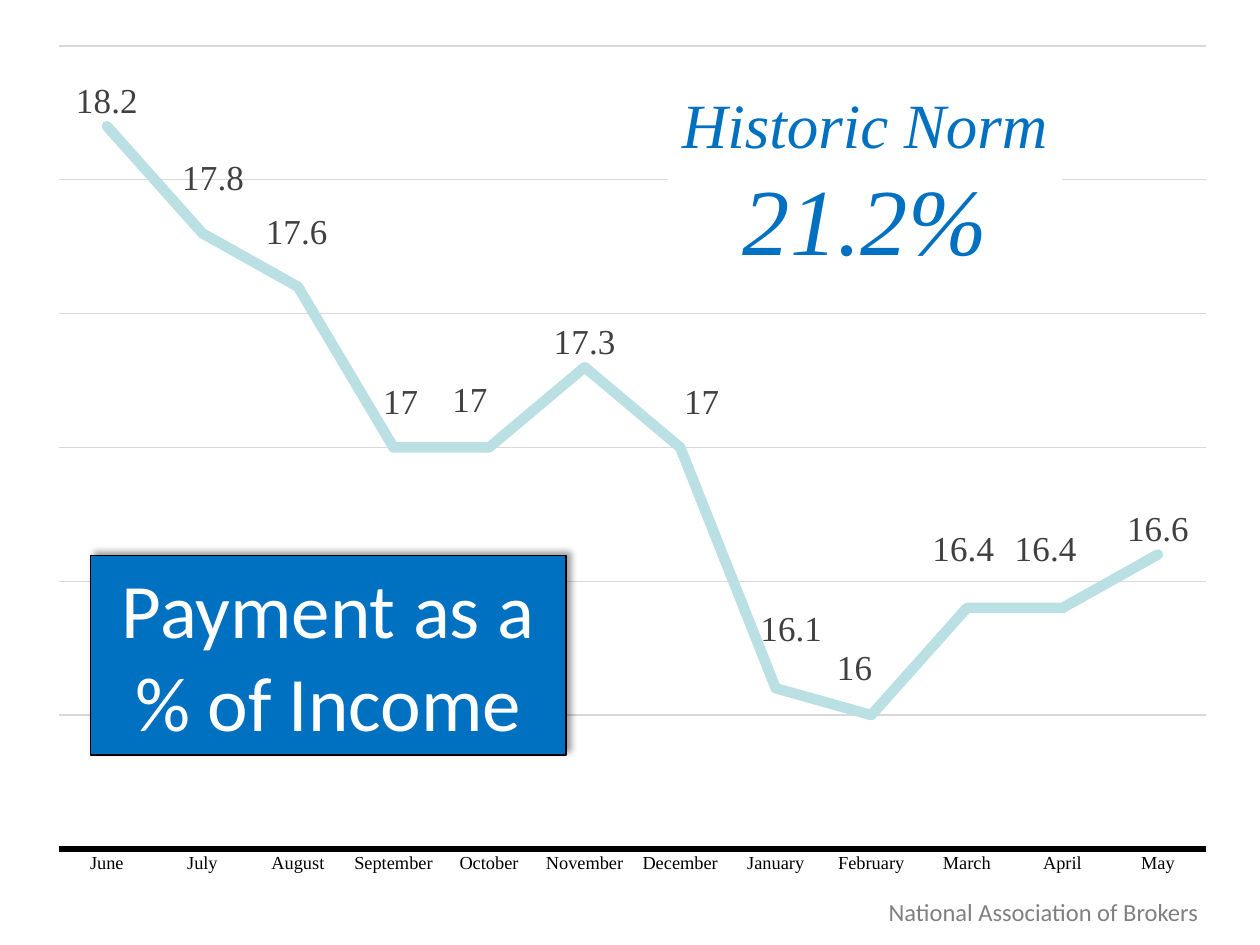
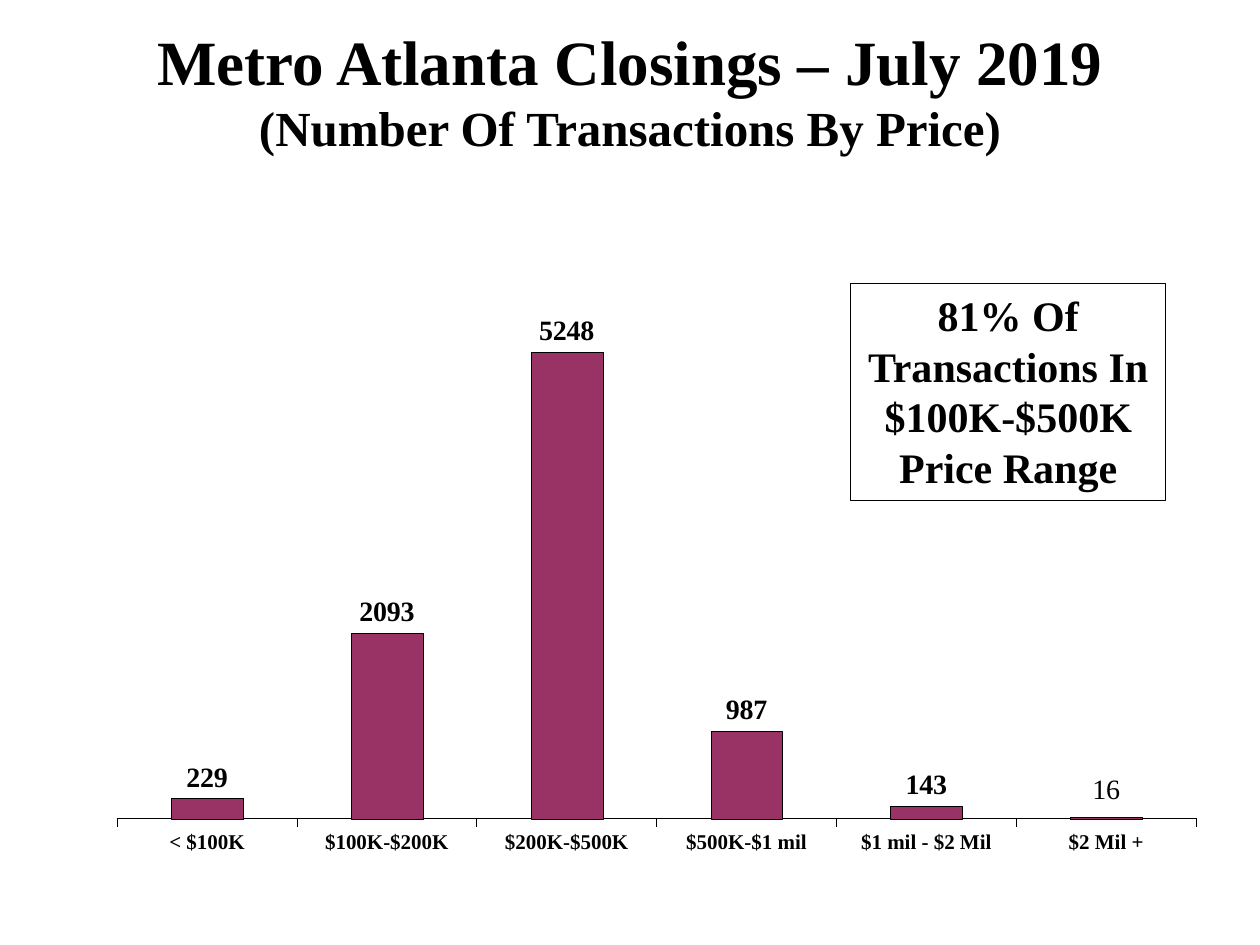
from pptx import Presentation
from pptx.chart.data import CategoryChartData
from pptx.dml.color import RGBColor
from pptx.enum.chart import XL_CHART_TYPE, XL_LABEL_POSITION, XL_TICK_LABEL_POSITION, XL_TICK_MARK
from pptx.enum.shapes import MSO_SHAPE
from pptx.enum.text import MSO_ANCHOR, MSO_AUTO_SIZE, PP_ALIGN
from pptx.oxml import parse_xml
from pptx.oxml.ns import nsdecls
from pptx.util import Cm, Pt

BLACK = RGBColor(0x00, 0x00, 0x00)
WHITE = RGBColor(0xFF, 0xFF, 0xFF)
BLUE = RGBColor(0x00, 0x70, 0xC0)
GRAY = RGBColor(0x80, 0x80, 0x80)
LABEL_GRAY = RGBColor(0x40, 0x40, 0x40)
GRID_GRAY = RGBColor(0xD9, 0xD9, 0xD9)
PALE_TEAL = RGBColor(0xBB, 0xE0, 0xE3)
PLUM = RGBColor(0x99, 0x33, 0x66)
SERIF = "Times New Roman"
SANS = "Calibri"

PAYMENT_SHARES = {
    "June": 18.2, "July": 17.8, "August": 17.6, "September": 17,
    "October": 17, "November": 17.3, "December": 17, "January": 16.1,
    "February": 16, "March": 16.4, "April": 16.4, "May": 16.6,
}
LABEL_SHIFTS_PERCENT = {
    1: (0.9, -3.5), 2: (-0.1, -3.4), 3: (0.6, -2.3), 4: (-1.6, -2.6), 6: (1.8, -2.3),
    7: (1.3, -3.9), 8: (-1.4, -2.5), 9: (-0.3, -3.9), 10: (-1.4, -3.9),
}
CLOSINGS = {
    "< $100K": 229, "$100K-$200K": 2093, "$200K-$500K": 5248,
    "$500K-$1 mil": 987, "$1 mil - $2 Mil": 143, "$2 Mil +": 16,
}


def set_attributes(target, values):
    for name, value in values.items():
        setattr(target, name, value)


def format_font(font, name, size, color, **values):
    set_attributes(font, {"name": name, "size": Pt(size), **values})
    font.color.rgb = color


def format_line(line, color, width):
    line.color.rgb = color
    line.width = Pt(width)


def fill_text(shape, lines, name, color, alignment=PP_ALIGN.CENTER, wrap=True,
              anchor=MSO_ANCHOR.TOP, **values):
    frame = shape.text_frame
    set_attributes(frame, {
        "auto_size": MSO_AUTO_SIZE.NONE, "word_wrap": wrap, "vertical_anchor": anchor,
    })
    for index, (text, size) in enumerate(lines):
        paragraph = frame.add_paragraph() if index else frame.paragraphs[0]
        paragraph.alignment = alignment
        run = paragraph.add_run()
        run.text = text
        format_font(run.font, name, size, color, **values)


def add_panel(slide, box, fill=None, outline=None):
    panel = slide.shapes.add_shape(MSO_SHAPE.RECTANGLE, *box)
    panel.shadow.inherit = False
    if fill is None:
        panel.fill.background()
    else:
        panel.fill.solid()
        panel.fill.fore_color.rgb = fill
    if outline is None:
        panel.line.fill.background()
    else:
        format_line(panel.line, outline, 0.75)
    return panel


def add_panel_shadow(panel):
    effects = panel._element.spPr.find(
        "{http://schemas.openxmlformats.org/drawingml/2006/main}effectLst")
    effects.append(parse_xml(
        f'<a:outerShdw {nsdecls("a")} blurRad="{Pt(4)}" dist="{Pt(3)}" dir="18900000" '
        'algn="bl" rotWithShape="0"><a:srgbClr val="000000">'
        '<a:alpha val="40000"/></a:srgbClr></a:outerShdw>'))


def manual_layout(modes, **percents):
    values = "".join(f'<c:{key} val="{value / 100:.4f}"/>' for key, value in percents.items())
    return parse_xml(f'<c:layout {nsdecls("c")}><c:manualLayout>{modes}{values}'
                     '</c:manualLayout></c:layout>')


def place_plot(chart, x, y, w, h):
    plot_area = chart._chartSpace.xpath(".//c:plotArea")[0]
    for layout in plot_area.xpath("./c:layout"):
        plot_area.remove(layout)
    modes = '<c:layoutTarget val="inner"/><c:xMode val="edge"/><c:yMode val="edge"/>'
    plot_area.insert(0, manual_layout(modes, x=x, y=y, w=w, h=h))


def shift_label(chart, index, x, y):
    label = chart._chartSpace.xpath(f'.//c:dLbl[c:idx/@val="{index}"]')[0]
    label.insert(1, manual_layout("", x=x, y=y))


def hide_leader_lines(chart):
    labels = chart._chartSpace.xpath(".//c:ser/c:dLbls")[0]
    for leader_lines in labels.xpath("./c:showLeaderLines"):
        leader_lines.set("val", "0")
    labels.append(parse_xml(
        f'<c:extLst {nsdecls("c")}><c:ext uri="{{CE6537A1-D6FC-4f65-9D91-7224C49458BB}}" '
        'xmlns:c15="http://schemas.microsoft.com/office/drawing/2012/chart">'
        '<c15:showLeaderLines val="0"/></c:ext></c:extLst>'))


def add_values_chart(slide, box, kind, values, scale, plot_box):
    data = CategoryChartData()
    data.categories = list(values)
    data.add_series("Series 1", list(values.values()))
    chart = slide.shapes.add_chart(kind, *box, data).chart
    set_attributes(chart, {"has_legend": False, "has_title": False})
    format_font(chart.font, SERIF, 10, BLACK)
    minimum, maximum, unit = scale
    set_attributes(chart.value_axis, {
        "minimum_scale": minimum, "maximum_scale": maximum, "major_unit": unit,
        "has_major_gridlines": False, "visible": False,
    })
    place_plot(chart, *plot_box)
    return chart, chart.plots[0].series[0]


def format_labels(labels, position, color, size, **values):
    set_attributes(labels, {"show_value": True, "position": position})
    format_font(labels.font, SERIF, size, color, **values)


def move_label(chart, series, index, shift, position, color, size, **values):
    label = series.points[index].data_label
    format_font(label.font, SERIF, size, color, **values)
    label.position = position
    shift_label(chart, index, *shift)


def add_payment_chart(slide, box):
    chart, series = add_values_chart(
        slide, box, XL_CHART_TYPE.LINE, PAYMENT_SHARES, (15.5, 18.5, 0.5),
        (2, 2, 96, 93.2))
    chart.value_axis.has_major_gridlines = True
    format_line(chart.value_axis.major_gridlines.format.line, GRID_GRAY, 0.75)
    axis = chart.category_axis
    axis.major_tick_mark = XL_TICK_MARK.NONE
    format_font(axis.tick_labels.font, SERIF, 10.5, BLACK)
    format_line(axis.format.line, BLACK, 3)
    series.smooth = False
    format_line(series.format.line, PALE_TEAL, 6)
    series._element.xpath("./c:spPr/a:ln")[0].set("cap", "rnd")
    label_style = (XL_LABEL_POSITION.ABOVE, LABEL_GRAY, 20)
    format_labels(series.data_labels, *label_style)
    for index, shift in LABEL_SHIFTS_PERCENT.items():
        move_label(chart, series, index, shift, *label_style)
    hide_leader_lines(chart)


def add_closings_chart(slide, box):
    chart, series = add_values_chart(
        slide, box, XL_CHART_TYPE.COLUMN_CLUSTERED, CLOSINGS, (0, 6000, 1000),
        (2.8, 12.9, 96.2, 77.6))
    set_attributes(chart.plots[0], {"gap_width": 150, "vary_by_categories": False})
    axis = chart.category_axis
    set_attributes(axis, {
        "major_tick_mark": XL_TICK_MARK.OUTSIDE,
        "tick_label_position": XL_TICK_LABEL_POSITION.LOW,
    })
    format_font(axis.tick_labels.font, SERIF, 12, BLACK, bold=True)
    format_line(axis.format.line, BLACK, 0.01)
    series.format.fill.solid()
    series.format.fill.fore_color.rgb = PLUM
    format_line(series.format.line, BLACK, 0.06)
    label_style = (XL_LABEL_POSITION.OUTSIDE_END, BLACK, 16)
    format_labels(series.data_labels, *label_style, bold=True)
    move_label(chart, series, len(CLOSINGS) - 1, (0, -0.9), *label_style, bold=False)
    hide_leader_lines(chart)


def add_source_credit(slide, box):
    credit = slide.shapes.add_textbox(*box)
    fill_text(credit, [("National Association of Brokers", 14)], SANS, GRAY,
              PP_ALIGN.RIGHT, wrap=False)


def add_payment_caption(slide, box):
    caption = add_panel(slide, box, BLUE, BLACK)
    add_panel_shadow(caption)
    fill_text(caption, [("Payment as a", 44), ("% of Income", 44)], SANS, WHITE)


def add_historic_norm(slide, box):
    norm = add_panel(slide, box, WHITE)
    fill_text(norm, [("Historic Norm", 36), ("21.2%", 54)], SERIF, BLUE,
              wrap=False, italic=True)


def add_closings_title(slide, box):
    title = slide.shapes.title
    set_attributes(title, dict(zip(("left", "top", "width", "height"), box)))
    fill_text(title, [("Metro Atlanta Closings – July 2019", 36)], SERIF, BLACK,
              anchor=MSO_ANCHOR.MIDDLE, bold=True)
    paragraph = title.text_frame.paragraphs[0]
    paragraph.add_line_break()
    subtitle = paragraph.add_run()
    subtitle.text = "(Number Of Transactions By Price)"
    format_font(subtitle.font, SERIF, 28, BLACK, bold=True)


def add_price_range_note(slide, box):
    note = add_panel(slide, box, outline=BLACK)
    fill_text(note, [("81% Of Transactions In $100K-$500K Price Range", 24)],
              SERIF, BLACK, bold=True)


def cm_box(left, top, width, height):
    return Cm(left), Cm(top), Cm(width), Cm(height)


def build_payment_slide(presentation):
    slide = presentation.slides.add_slide(presentation.slide_layouts[6])
    add_source_credit(slide, cm_box(17.45, 17.96, 6.96, 0.86))
    add_payment_chart(slide, cm_box(0.71, 0.58, 24.08, 17.37))
    add_payment_caption(slide, cm_box(1.83, 11.2, 9.58, 4.02))
    add_historic_norm(slide, cm_box(13.46, 1.6, 7.95, 4.11))


def build_closings_slide(presentation):
    slide = presentation.slides.add_slide(presentation.slide_layouts[5])
    add_closings_chart(slide, cm_box(1.73, 3.96, 22.61, 13.87))
    add_closings_title(slide, cm_box(0, 1.27, 25.4, 1.07))
    add_price_range_note(slide, cm_box(17.15, 5.72, 6.35, 4.37))


def main():
    presentation = Presentation()
    set_attributes(presentation, {"slide_width": Cm(25.4), "slide_height": Cm(19.05)})
    build_payment_slide(presentation)
    build_closings_slide(presentation)
    presentation.save("out.pptx")


if __name__ == "__main__":
    main()
